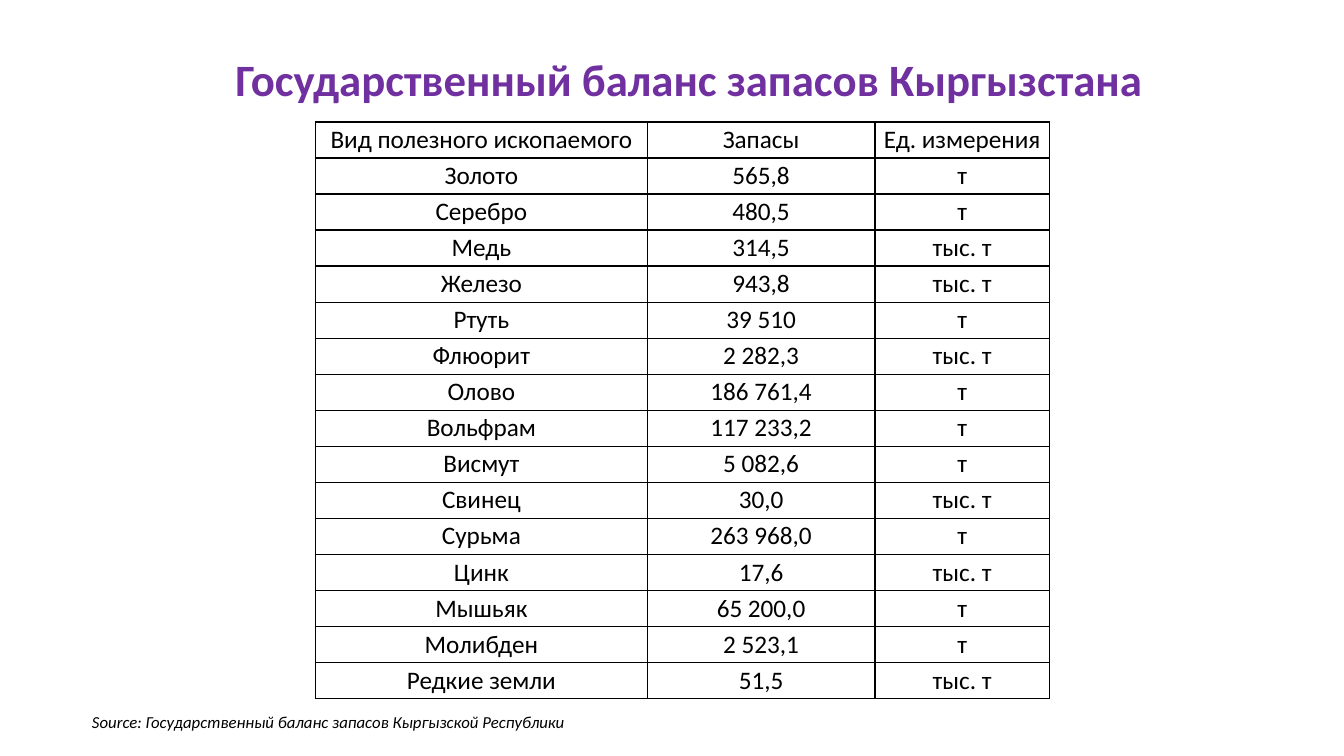
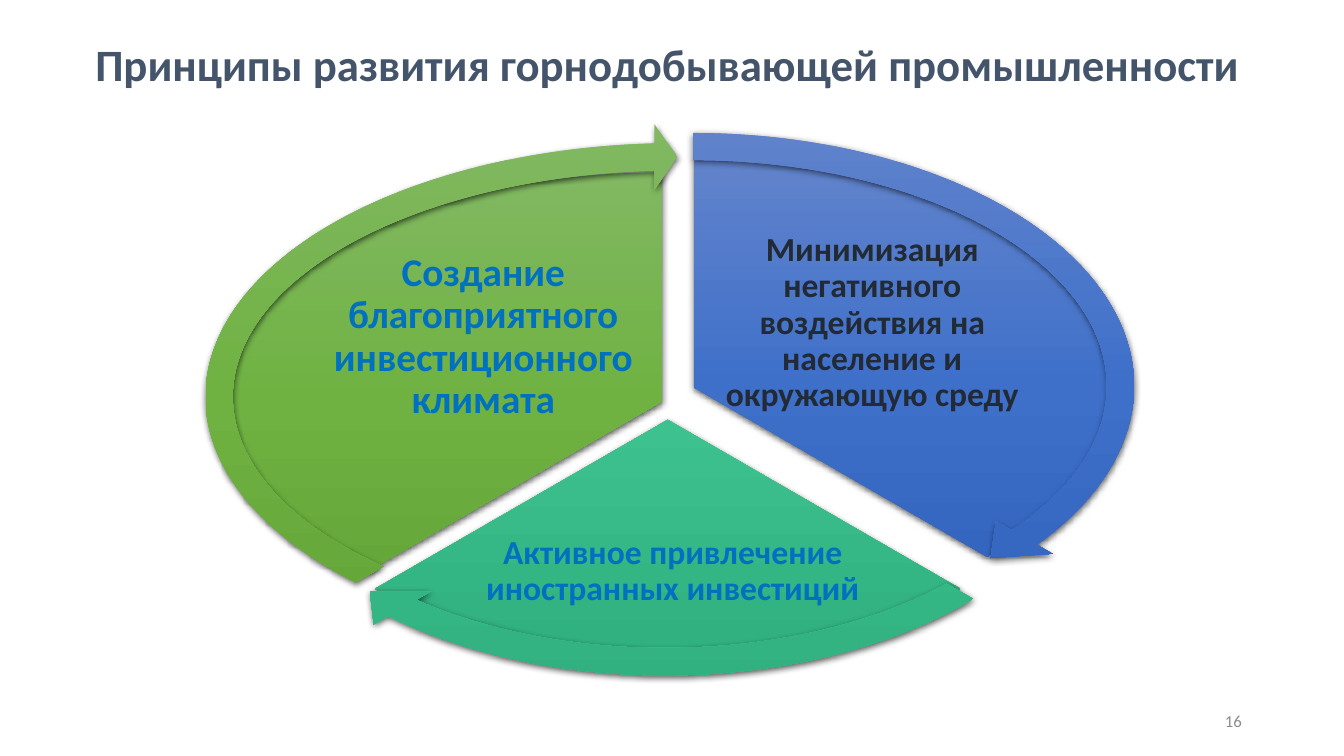
"""Build two slides on the mining industry: a reserves table and a cycle of principles."""
from copy import deepcopy
from dataclasses import dataclass

from pptx import Presentation
from pptx.dml.color import RGBColor
from pptx.enum.shapes import MSO_SHAPE
from pptx.enum.text import MSO_ANCHOR, MSO_AUTO_SIZE, PP_ALIGN
from pptx.oxml import parse_xml
from pptx.oxml.ns import nsdecls, qn
from pptx.util import Pt


@dataclass(frozen=True)
class Theme:
    font: str = "Calibri"
    white: str = "FFFFFF"
    black: str = "000000"
    purple: str = "7030A0"
    slate: str = "44546A"
    gray: str = "8C8C8C"
    navy: str = "222A35"
    azure: str = "0070C0"
    blue_fade: tuple = ("6183CB", "3E70CA", "3062BB")
    teal_fade: tuple = ("60C39A", "3DC18F", "31B080")
    green_fade: tuple = ("81B861", "6FB242", "62A336")
    title_size: int = 32
    large_size: int = 28
    caption_size: int = 24
    table_size: int = 18
    note_size: int = 12


THEME = Theme()
SLIDE_SIZE = (960, 540)

TABLE_LEFT, TABLE_TOP, ROW_HEIGHT = 225.4, 87.1, 25.74
COLUMN_WIDTHS = (236.9, 162.7, 124.6)
RESERVES = (
    ("Вид полезного ископаемого", "Запасы", "Ед. измерения"),
    ("Золото", "565,8", "т"),
    ("Серебро", "480,5", "т"),
    ("Медь", "314,5", "тыс. т"),
    ("Железо", "943,8", "тыс. т"),
    ("Ртуть", "39 510", "т"),
    ("Флюорит", "2 282,3", "тыс. т"),
    ("Олово", "186 761,4", "т"),
    ("Вольфрам", "117 233,2", "т"),
    ("Висмут", "5 082,6", "т"),
    ("Свинец", "30,0", "тыс. т"),
    ("Сурьма", "263 968,0", "т"),
    ("Цинк", "17,6", "тыс. т"),
    ("Мышьяк", "65 200,0", "т"),
    ("Молибден", "2 523,1", "т"),
    ("Редкие земли", "51,5", "тыс. т"),
)

PIE_SIZE = (619.9, 327.6)
ARROW_BAND, ARROW_HEAD_ANGLE, ARROW_HEAD_WIDTH = 0.05, 3.28, 0.06


@dataclass(frozen=True)
class Principle:
    """One sector of the cycle; angles are in units of 5/3 degree."""
    text: str
    text_frame: tuple
    size: int
    color: str
    fade: tuple
    pie_corner: tuple
    pie_angles: tuple
    arrow_frame: tuple
    arrow_angles: tuple


PRINCIPLES = (
    Principle(
        "Минимизация негативного воздействия на население и окружающую среду",
        (512.6, 182.2, 221, 97.2), THEME.caption_size, THEME.navy, THEME.blue_fade,
        (185.8, 113), (162, 18), (166.3, 81.4, 657.4, 388.8), (14.73, 161.99)),
    Principle(
        "Активное привлечение иностранных инвестиций",
        (314.6, 367, 331.9, 82), THEME.caption_size, THEME.azure, THEME.teal_fade,
        (167, 136.1), (18, 90), (153.4, 105.1, 643, 391), (86.72, 18.01)),
    Principle(
        "Создание благоприятного инвестиционного климата",
        (234.7, 192.2, 221, 97.2), THEME.large_size, THEME.azure, THEME.green_fade,
        (162.7, 123.1), (90, 162), (133.2, 88.6, 701.3, 389.5), (158.73, 90)),
)


def set_all(target, values):
    """Set every named attribute of the target."""
    for name, value in values.items():
        setattr(target, name, value)


def place(shape, frame):
    """Move and size a shape, with lengths in points."""
    names = ("left", "top", "width", "height")
    set_all(shape, dict(zip(names, map(Pt, frame))))


def write(text_frame, text, size, color, align=PP_ALIGN.CENTER, spacing=None, **styles):
    """Write one formatted paragraph."""
    paragraph = text_frame.paragraphs[0]
    set_all(paragraph, {"alignment": align, "line_spacing": spacing})
    span = paragraph.add_run()
    span.text = text
    set_all(span.font, {"name": THEME.font, "size": Pt(size), **styles})
    span.font.color.rgb = RGBColor.from_string(color)


def format_frame(text_frame, margin=None):
    """Make a text frame wrap, keep its size and centre its text vertically."""
    set_all(text_frame, {"word_wrap": True, "auto_size": MSO_AUTO_SIZE.NONE,
                         "vertical_anchor": MSO_ANCHOR.MIDDLE})
    if margin is not None:
        sides = ("left", "right", "top", "bottom")
        set_all(text_frame, {f"margin_{side}": Pt(margin) for side in sides})


def add_page(deck, title, frame, color):
    """Add a title-only slide with a formatted title."""
    page = deck.slides.add_slide(deck.slide_layouts[5])
    place(page.shapes.title, frame)
    format_frame(page.shapes.title.text_frame)
    write(page.shapes.title.text_frame, title, THEME.title_size, color, bold=True)
    return page


def add_text(page, frame, text, size, color, margin=None, **styles):
    """Add a text box."""
    box = page.shapes.add_textbox(*map(Pt, frame))
    format_frame(box.text_frame, margin)
    write(box.text_frame, text, size, color, **styles)


def add_borders(cell_properties):
    """Draw a thin black line on each side of a cell."""
    for side in ("lnL", "lnR", "lnT", "lnB"):
        cell_properties.append(parse_xml(
            f'<a:{side} {nsdecls("a")} w="{Pt(1)}"><a:solidFill>'
            f'<a:srgbClr val="{THEME.black}"/></a:solidFill></a:{side}>'))


def add_reserves_table(page):
    """Add the bordered table of reserves."""
    height = ROW_HEIGHT * len(RESERVES)
    frame = page.shapes.add_table(
        len(RESERVES), len(COLUMN_WIDTHS),
        *map(Pt, (TABLE_LEFT, TABLE_TOP, sum(COLUMN_WIDTHS), height)))
    table = frame.table
    set_all(table, {"first_row": False, "horz_banding": False})
    for column, width in zip(table.columns, COLUMN_WIDTHS):
        column.width = Pt(width)
    for cell_properties in frame.element.iter(qn("a:tcPr")):
        add_borders(cell_properties)
    for row, values in zip(table.rows, RESERVES):
        row.height = Pt(ROW_HEIGHT)
        for cell, value in zip(row.cells, values):
            set_all(cell, {"margin_left": 0, "margin_right": 0, "margin_top": 0,
                           "margin_bottom": 0, "vertical_anchor": MSO_ANCHOR.MIDDLE})
            cell.fill.solid()
            cell.fill.fore_color.rgb = RGBColor.from_string(THEME.white)
            write(cell.text_frame, value, THEME.table_size, THEME.black)


def fade_fill(shape, colors):
    """Fill a shape with a three-colour fade from top to bottom."""
    shape.fill.gradient()
    shape.fill.gradient_angle = 270
    stops = next(shape.element.iter(qn("a:gsLst")))
    stops.insert(1, deepcopy(stops[0]))
    for index, stop in enumerate(shape.fill.gradient_stops):
        stop.position = index / 2
        stop.color.rgb = RGBColor.from_string(colors[index])


def drop_shadow(shape):
    """Give a shape a soft shadow below it."""
    shape.shadow.inherit = False
    effects = next(shape.element.iter(qn("a:effectLst")))
    effects.append(parse_xml(
        f'<a:outerShdw {nsdecls("a")} blurRad="{Pt(4.5)}" dist="{Pt(1.5)}" '
        f'dir="5400000" algn="ctr" rotWithShape="0"><a:srgbClr val="{THEME.black}">'
        '<a:alpha val="63000"/></a:srgbClr></a:outerShdw>'))


def add_sector(page, kind, frame, adjustments, fade):
    """Add a shaded pie or circular arrow."""
    shape = page.shapes.add_shape(kind, *map(Pt, frame))
    for index, value in enumerate(adjustments):
        shape.adjustments[index] = value
    fade_fill(shape, fade)
    shape.line.fill.background()
    drop_shadow(shape)


def add_cycle(page):
    """Add the captioned sectors, then the arrows around them."""
    for item in PRINCIPLES:
        add_sector(page, MSO_SHAPE.PIE, item.pie_corner + PIE_SIZE,
                   item.pie_angles, item.fade)
        add_text(page, item.text_frame, item.text, item.size, item.color,
                 margin=2.4, spacing=0.9, bold=True)
    for item in PRINCIPLES:
        adjustments = (ARROW_BAND, ARROW_HEAD_ANGLE, *item.arrow_angles, ARROW_HEAD_WIDTH)
        add_sector(page, MSO_SHAPE.CIRCULAR_ARROW, item.arrow_frame,
                   adjustments, item.fade)


def main():
    """Build and save the deck."""
    deck = Presentation()
    deck.slide_width, deck.slide_height = map(Pt, SLIDE_SIZE)

    page = add_page(deck, "Государственный баланс запасов Кыргызстана",
                    (77.8, 33.1, 829.4, 46), THEME.purple)
    add_reserves_table(page)
    add_text(page, (58.6, 504.7, 400, 21.8),
             "Source: Государственный баланс запасов Кыргызской Республики",
             THEME.note_size, THEME.black, align=PP_ALIGN.LEFT, italic=True)

    page = add_page(deck, "Принципы развития горнодобывающей промышленности",
                    (51.8, 17, 850.3, 57), THEME.slate)
    add_text(page, (678.2, 500.5, 216, 28.8), "16", THEME.note_size, THEME.gray,
             align=PP_ALIGN.RIGHT)
    add_cycle(page)

    deck.save("out.pptx")


if __name__ == "__main__":
    main()
